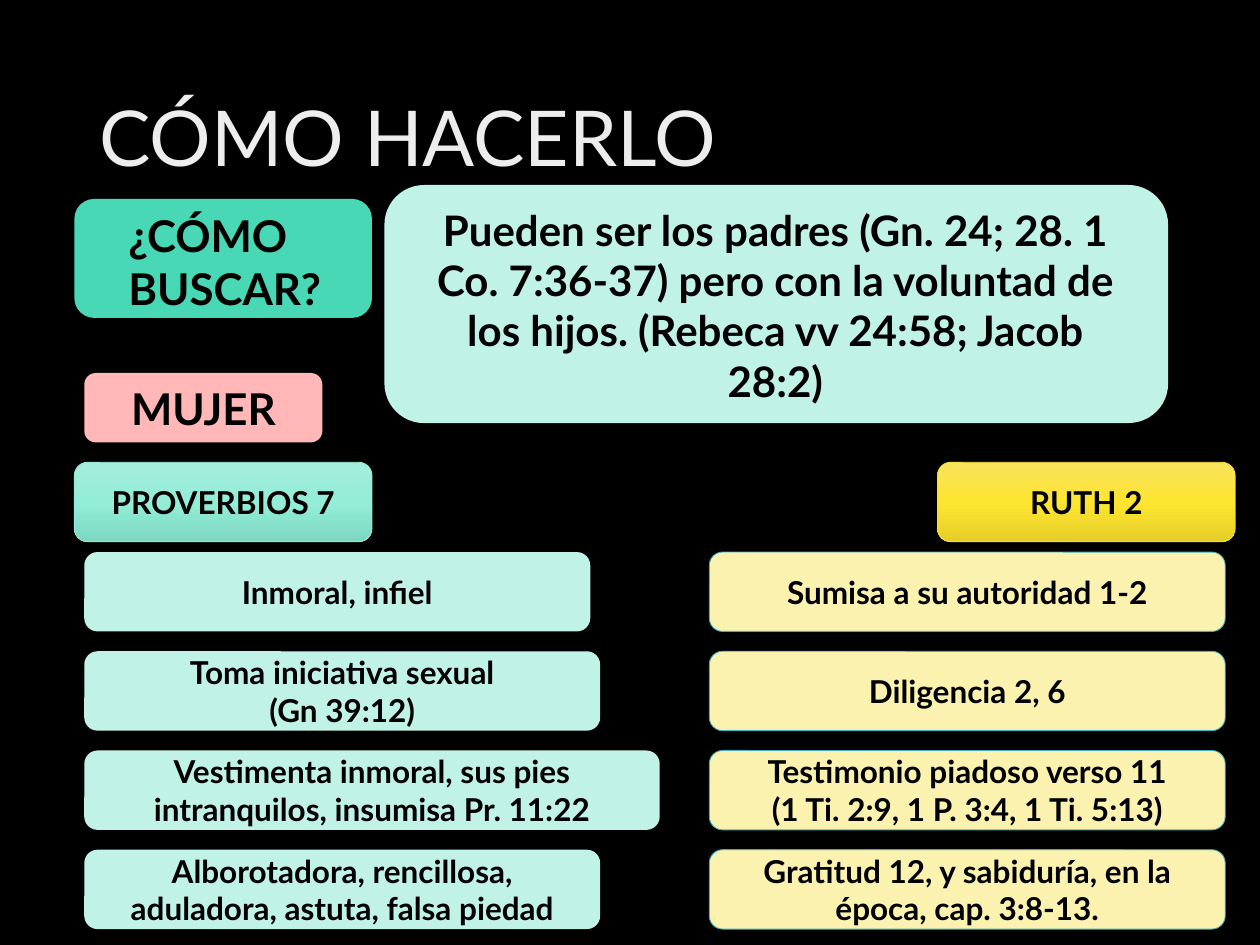
from copy import deepcopy
from pptx import Presentation
from pptx import util as u
from pptx.dml import color
from pptx.enum import shapes, text

FONT = "Lato"
MINT, PALE_YELLOW, TEAL_LINE = "C1F2E6", "FBF2B0", "41AEBD"

# Content: comparison columns as (text, width)
TITLE = "CÓMO HACERLO"
QUESTION = "¿CÓMO\nBUSCAR?"
ANSWER = ("Pueden ser los padres (Gn. 24; 28. 1 Co. 7:36-37) pero con la voluntad de "
          "los hijos. (Rebeca vv 24:58; Jacob 28:2)")
PROVERBS = [
    ("Inmoral, infiel", 10.2),
    ("Toma iniciativa sexual\n(Gn 39:12)", 10.4),
    ("Vestimenta inmoral, sus pies intranquilos, insumisa Pr. 11:22", 11.6),
    ("Alborotadora, rencillosa, aduladora, astuta, falsa piedad", 10.4),
]
RUTH = [
    ("Sumisa a su autoridad 1-2", 10.4),
    ("Diligencia 2, 6", 10.4),
    ("Testimonio piadoso verso 11\n(1 Ti. 2:9, 1 P. 3:4, 1 Ti. 5:13)", 10.4),
    ("Gratitud 12, y sabiduría, en la época, cap. 3:8-13.", 10.4),
]
# Headings: text, left, gradient stops, line colour
HEADINGS = [
    ("PROVERBIOS 7", 1.5, ("A4EDDB", "93EDD7", "7DD8C2"), "97E9D5"),
    ("RUTH 2", 18.9, ("F8E35C", "FDE531", "E5CE27"), "F4DE3A"),
]
# Columns: rows, left, fill, line colour
COLUMNS = [(PROVERBS, 1.7, MINT, None), (RUTH, 14.3, PALE_YELLOW, TEAL_LINE)]
ROW_TOP, ROW_STEP, ROW_H = 11.13, 2.0, 1.6


def rgb(value):
    return color.RGBColor.from_string(value)


def write(sp, content, size, align=text.PP_ALIGN.CENTER,
          anchor=text.MSO_ANCHOR.MIDDLE, fore="000000", bold=True):
    tf = sp.text_frame
    tf.word_wrap = True
    tf.vertical_anchor = anchor
    tf.text = content
    for p in tf.paragraphs:
        p.alignment = align
        p.font.name, p.font.size, p.font.bold = FONT, u.Pt(size), bold
        p.font.color.rgb = rgb(fore)
    return tf


def add_text(slide, box, content, size, **style):
    return write(slide.shapes.add_textbox(*map(u.Cm, box)), content, size, **style)


def fill_gradient(sp, stops):
    """Three even stops, running from top to bottom."""
    sp.fill.gradient()
    sp.fill.gradient_angle = 270
    first = sp.fill.gradient_stops[0]._gs
    first.addnext(deepcopy(first))
    for i, (stop, value) in enumerate(zip(sp.fill.gradient_stops, stops)):
        stop.color.rgb = rgb(value)
        stop.position = i / 2


def add_box(slide, box, fill, line=None, content="", size=18):
    sp = slide.shapes.add_shape(shapes.MSO_SHAPE.ROUNDED_RECTANGLE, *map(u.Cm, box))
    sp.shadow.inherit = False
    if isinstance(fill, tuple):
        fill_gradient(sp, fill)
    else:
        sp.fill.solid()
        sp.fill.fore_color.rgb = rgb(fill)
    if line:
        sp.line.color.rgb = rgb(line)
        sp.line.width = u.Pt(0.5)
    else:
        sp.line.fill.background()
    if content:
        write(sp, content, size)


def main():
    prs = Presentation()
    prs.slide_width, prs.slide_height = u.Cm(25.4), u.Cm(19.05)
    slide = prs.slides.add_slide(prs.slide_layouts[6])
    slide.background.fill.solid()
    slide.background.fill.fore_color.rgb = rgb("000000")

    # Title
    tf = add_text(slide, (1.75, 1.01, 21.9, 3.68), TITLE, 44,
                  align=text.PP_ALIGN.LEFT, fore="EDEDED", bold=False)
    tf.paragraphs[0].line_spacing = 0.9

    # Question and answer
    top = text.MSO_ANCHOR.TOP
    add_box(slide, (7.75, 3.73, 15.8, 4.8), MINT)
    add_text(slide, (8.53, 3.99, 14.2, 4.37), ANSWER, 24, anchor=top)
    add_box(slide, (1.5, 4.01, 6, 2.4), "48D8B5")
    tf = add_text(slide, (2.34, 4.09, 4.9, 2.39), QUESTION, 25,
                  align=text.PP_ALIGN.LEFT, anchor=top)
    tf.margin_right = 0

    # Comparison
    add_box(slide, (1.7, 7.52, 4.8, 1.4), "FFB7B7", content="MUJER", size=25)
    for label, left, stops, line in HEADINGS:
        add_box(slide, (left, 9.32, 6, ROW_H), stops, line, label)
    for rows, left, fill, line in COLUMNS:
        for i, (label, width) in enumerate(rows):
            add_box(slide, (left, ROW_TOP + i * ROW_STEP, width, ROW_H), fill, line, label)

    prs.save("out.pptx")


if __name__ == "__main__":
    main()
